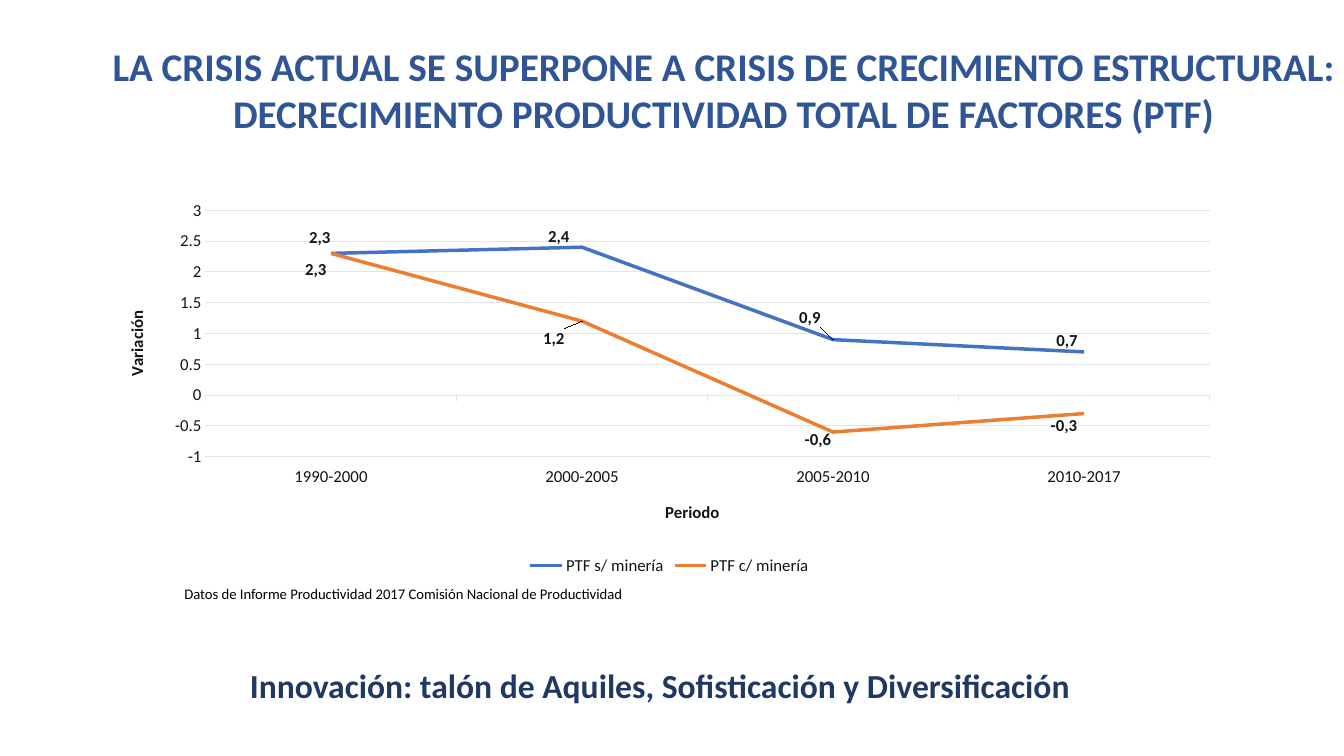
from pptx import Presentation
from pptx.chart.data import CategoryChartData
from pptx.dml.color import RGBColor
from pptx.enum.chart import (XL_CHART_TYPE, XL_LABEL_POSITION, XL_LEGEND_POSITION,
                             XL_MARKER_STYLE, XL_TICK_LABEL_POSITION, XL_TICK_MARK)
from pptx.enum.text import MSO_ANCHOR, PP_ALIGN
from pptx.oxml import parse_xml
from pptx.oxml.ns import nsdecls
from pptx.util import Inches, Pt

LINE_CHART = XL_CHART_TYPE.LINE
CENTER_LABEL = XL_LABEL_POSITION.CENTER
BOTTOM_LEGEND = XL_LEGEND_POSITION.BOTTOM
NO_MARKER = XL_MARKER_STYLE.NONE
LOW_LABELS = XL_TICK_LABEL_POSITION.LOW
TICK_NONE, TICK_OUT = XL_TICK_MARK.NONE, XL_TICK_MARK.OUTSIDE
TOP, CENTER = MSO_ANCHOR.TOP, PP_ALIGN.CENTER

FONT = "Calibri"
BLACK = RGBColor(0x00, 0x00, 0x00)
INK = RGBColor(0x11, 0x15, 0x1A)
GRID = RGBColor(0xE0, 0xE5, 0xEB)
BLUE = RGBColor(0x44, 0x72, 0xC4)
ORANGE = RGBColor(0xED, 0x7D, 0x31)
TITLE_BLUE = RGBColor(0x2F, 0x55, 0x97)
NAVY = RGBColor(0x20, 0x38, 0x64)

CHART_WIDTH, CHART_HEIGHT = 11.28, 5.46
PERIODS = ["1990-2000", "2000-2005", "2005-2010", "2010-2017"]
# Name, colour, values, label offsets from each point in inches
SERIES = [
    ("PTF s/ minería", BLUE, [2.3, 2.4, 0.9, 0.7],
     [(-0.11, -0.16), (-0.23, -0.1), (-0.23, -0.22), (-0.17, -0.11)]),
    ("PTF c/ minería", ORANGE, [2.3, 1.2, -0.6, -0.3],
     [(-0.15, 0.16), (-0.28, 0.17), (-0.15, 0.08), (-0.2, 0.12)]),
]


def style_font(font, size, color, bold=False):
    font.name = FONT
    font.size = Pt(size)
    font.bold = bold
    font.color.rgb = color


def manual_layout(x, y, size=None):
    """Return a chart layout; with a size it places the inner plot area."""
    target = mode = extent = ""
    if size:
        target = '<c:layoutTarget val="inner"/>'
        mode = '<c:xMode val="edge"/><c:yMode val="edge"/>'
        extent = f'<c:w val="{size[0]}"/><c:h val="{size[1]}"/>'
    return parse_xml(
        f'<c:layout {nsdecls("c")}><c:manualLayout>{target}{mode}'
        f'<c:x val="{x:.4f}"/><c:y val="{y:.4f}"/>{extent}'
        '</c:manualLayout></c:layout>')


def add_title(slide, text):
    title = slide.shapes.title
    title.left, title.top = Inches(0.85), Inches(0.37)
    title.width, title.height = Inches(12.65), Inches(1.04)
    frame = title.text_frame
    frame.word_wrap = True
    frame.vertical_anchor = TOP
    frame.text = text
    paragraph = frame.paragraphs[0]
    paragraph.alignment = CENTER
    paragraph.line_spacing = 1.0
    style_font(paragraph.font, 28, TITLE_BLUE, bold=True)


def add_text(slide, text, box, size, color, bold=False, wrap=True):
    shape = slide.shapes.add_textbox(*map(Inches, box))
    frame = shape.text_frame
    frame.word_wrap = wrap
    frame.text = text
    style_font(frame.paragraphs[0].font, size, color, bold)


def style_axis(axis, title, tick, line_color=None):
    axis.major_tick_mark = tick
    axis.minor_tick_mark = TICK_NONE
    style_font(axis.tick_labels.font, 12, INK)
    if line_color is None:
        axis.format.line.fill.background()
    else:
        axis.format.line.color.rgb = line_color
        axis.format.line.width = Pt(0.75)
    frame = axis.axis_title.text_frame
    frame.text = title
    style_font(frame.paragraphs[0].font, 12, INK, bold=True)


def style_series(series, color, values, offsets):
    series.smooth = False
    series.marker.style = NO_MARKER
    series.format.line.color.rgb = color
    series.format.line.width = Pt(2.5)
    for index, (value, (x, y)) in enumerate(zip(values, offsets)):
        label = series.points[index].data_label
        label.text_frame.text = str(value).replace(".", ",")
        style_font(label.text_frame.paragraphs[0].runs[0].font, 12, INK, bold=True)
        label.position = CENTER_LABEL
        # Shift the label away from its point
        label_index = series._element.xpath(f'.//c:dLbl/c:idx[@val="{index}"]')[0]
        label_index.addnext(manual_layout(x / CHART_WIDTH, y / CHART_HEIGHT))


def add_productivity_chart(slide):
    data = CategoryChartData()
    data.categories = PERIODS
    for name, _, values, _ in SERIES:
        data.add_series(name, values)
    chart = slide.shapes.add_chart(
        LINE_CHART, Inches(1), Inches(0.29),
        Inches(CHART_WIDTH), Inches(CHART_HEIGHT), data).chart
    chart.has_title = False
    style_font(chart.font, 10, BLACK)
    chart.plots[0].vary_by_categories = False

    # Axes
    style_axis(chart.category_axis, "Periodo", TICK_OUT, GRID)
    chart.category_axis.tick_label_position = LOW_LABELS
    value_axis = chart.value_axis
    style_axis(value_axis, "Variación", TICK_NONE)
    value_axis.axis_title._element.xpath(".//a:bodyPr")[0].set("rot", "-5400000")
    value_axis.minimum_scale, value_axis.maximum_scale = -1, 3
    value_axis.major_unit = 0.5
    value_axis.tick_labels.number_format = "General"
    value_axis.tick_labels.number_format_is_linked = False
    value_axis.major_gridlines.format.line.color.rgb = GRID
    value_axis.major_gridlines.format.line.width = Pt(0.75)

    # Legend
    chart.has_legend = True
    chart.legend.position = BOTTOM_LEGEND
    chart.legend.include_in_layout = False
    style_font(chart.legend.font, 12, INK)

    # Lines and point labels
    for series, (_, color, values, offsets) in zip(chart.plots[0].series, SERIES):
        style_series(series, color, values, offsets)

    # Plot area
    plot_area = chart._chartSpace.xpath("c:chart/c:plotArea")[0]
    for layout in plot_area.xpath("c:layout"):
        plot_area.remove(layout)
    plot_area.insert(0, manual_layout(0.092, 0.329, (0.883, 0.448)))


def main():
    presentation = Presentation()
    presentation.slide_width = Inches(13.33)
    presentation.slide_height = Inches(7.5)
    slide = presentation.slides.add_slide(presentation.slide_layouts[5])

    add_productivity_chart(slide)
    add_text(slide, "Datos de Informe Productividad 2017 Comisión Nacional de Productividad",
             (1.73, 5.75, 6.67, 0.29), 10.5, BLACK)
    add_text(slide, "Innovación: talón de Aquiles, Sofisticación y Diversificación",
             (2.38, 6.55, 8.83, 0.5), 24, NAVY, bold=True, wrap=False)
    add_title(slide, "LA CRISIS ACTUAL SE SUPERPONE A CRISIS DE CRECIMIENTO ESTRUCTURAL:\v"
                     "DECRECIMIENTO PRODUCTIVIDAD TOTAL DE FACTORES (PTF)")
    presentation.save("out.pptx")


if __name__ == "__main__":
    main()
